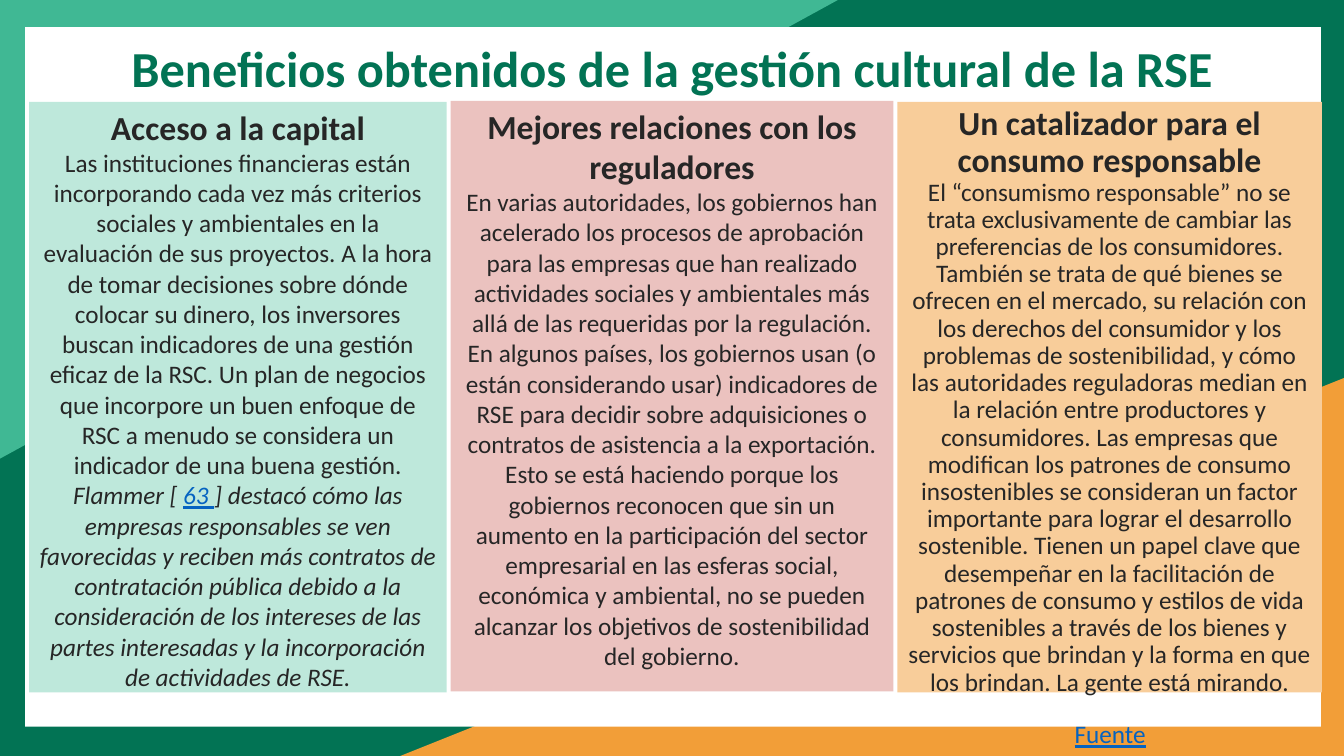
from dataclasses import dataclass

from lxml.etree import SubElement
from pptx import Presentation
from pptx.dml.color import RGBColor
from pptx.enum.shapes import MSO_SHAPE
from pptx.enum.text import MSO_ANCHOR, MSO_AUTO_SIZE, PP_ALIGN
from pptx.oxml.ns import qn
from pptx.util import Inches, Pt

HUES = {
    "green": "027354", "mint": "40B894", "orange": "F29E38", "white": "FFFFFF",
    "aqua": "BEE8DB", "pink": "EBC2BF", "peach": "F8CD9A",
    "ink": "262626", "link": "0563C1",
}


@dataclass
class Box:
    left: float
    top: float
    width: float
    height: float

    def lengths(self) -> tuple:
        return tuple(Inches(n) for n in (self.left, self.top, self.width, self.height))


@dataclass
class Block:
    box: Box
    hue: str
    kind: MSO_SHAPE = MSO_SHAPE.RECTANGLE
    turn: int = 0


@dataclass
class Para:
    text: str
    size: int = 18
    bold: bool = False
    slant: bool = False
    hue: str = "ink"
    mark: str = ""
    align: PP_ALIGN = PP_ALIGN.CENTER


@dataclass
class Panel:
    box: Box
    hue: str
    paras: list
    space: float = 1.0
    body: bool = False


BACK = [
    Block(Box(0, 0, 13.33, 7.5), "green"),
    Block(Box(3.97, 3.75, 9.36, 3.75), "orange", MSO_SHAPE.ISOSCELES_TRIANGLE),
    Block(Box(0, 0, 8.31, 4.55), "mint", MSO_SHAPE.ISOSCELES_TRIANGLE, 180),
    Block(Box(0.25, 0.27, 12.85, 6.94), "white"),
]
TITLE = Para("Beneficios obtenidos de la gestión cultural de la RSE", 36, True, hue="green")
SOURCE = Para("Fuente", hue="link", mark="Fuente", align=PP_ALIGN.LEFT)
PANELS = [
    Panel(Box(4.47, 1, 4.39, 5.86), "pink", [
        Para("Mejores relaciones con los reguladores", 24, True),
        Para("En varias autoridades, los gobiernos han acelerado los procesos de aprobación "
             "para las empresas que han realizado actividades sociales y ambientales más allá "
             "de las requeridas por la regulación. En algunos países, los gobiernos usan (o "
             "están considerando usar) indicadores de RSE para decidir sobre adquisiciones o "
             "contratos de asistencia a la exportación. Esto se está haciendo porque los "
             "gobiernos reconocen que sin un aumento en la participación del sector "
             "empresarial en las esferas social, económica y ambiental, no se pueden alcanzar "
             "los objetivos de sostenibilidad del gobierno."),
    ], body=True),
    Panel(Box(0.29, 1.01, 4.14, 5.86), "aqua", [
        Para("Acceso a la capital", 24, True),
        Para("Las instituciones financieras están incorporando cada vez más criterios "
             "sociales y ambientales en la evaluación de sus proyectos. A la hora de tomar "
             "decisiones sobre dónde colocar su dinero, los inversores buscan indicadores de "
             "una gestión eficaz de la RSC. Un plan de negocios que incorpore un buen enfoque "
             "de RSC a menudo se considera un indicador de una buena gestión."),
        Para("Flammer [ 63 ] destacó cómo las empresas responsables se ven favorecidas y "
             "reciben más contratos de contratación pública debido a la consideración de los "
             "intereses de las partes interesadas y la incorporación de actividades de RSE.",
             slant=True, mark="63 "),
    ]),
    Panel(Box(8.9, 1.01, 4.21, 5.86), "peach", [
        Para("Un catalizador para el consumo responsable", 24, True),
        Para("El “consumismo responsable” no se trata exclusivamente de cambiar las "
             "preferencias de los consumidores. También se trata de qué bienes se ofrecen en "
             "el mercado, su relación con los derechos del consumidor y los problemas de "
             "sostenibilidad, y cómo las autoridades reguladoras median en la relación entre "
             "productores y consumidores. Las empresas que modifican los patrones de consumo "
             "insostenibles se consideran un factor importante para lograr el desarrollo "
             "sostenible. Tienen un papel clave que desempeñar en la facilitación de patrones "
             "de consumo y estilos de vida sostenibles a través de los bienes y servicios que "
             "brindan y la forma en que los brindan. La gente está mirando."),
    ], space=0.9),
]


def tint(name: str) -> RGBColor:
    return RGBColor.from_string(HUES[name])


def paint(shape, hue: str) -> None:
    shape.fill.solid()
    shape.fill.fore_color.rgb = tint(hue)
    shape.line.fill.background()


def draw(shapes, block: Block):
    shape = shapes.add_shape(block.kind, *block.box.lengths())
    shape.shadow.inherit = False
    paint(shape, block.hue)
    shape.rotation = block.turn
    if block.kind == MSO_SHAPE.ISOSCELES_TRIANGLE:
        shape.adjustments[0] = 1
    return shape


def place(shapes, holder, box: Box):
    holder.left, holder.top, holder.width, holder.height = box.lengths()
    shapes.element.append(holder.element)
    return holder


def write(shape, paras: list, space: float = 1.0) -> None:
    frame = shape.text_frame
    frame.word_wrap = True
    frame.auto_size = MSO_AUTO_SIZE.NONE
    frame.vertical_anchor = MSO_ANCHOR.TOP
    for i, para in enumerate(paras):
        line = frame.add_paragraph() if i else frame.paragraphs[0]
        line.alignment = para.align
        line.line_spacing = space
        line.space_before = line.space_after = Pt(0)
        props = line._p.get_or_add_pPr()
        props.set("marL", "0")
        props.set("indent", "0")
        SubElement(props, qn("a:buNone"))
        font = line.font
        font.name, font.size = "Calibri", Pt(para.size)
        font.bold, font.italic = para.bold, para.slant
        font.color.rgb = tint(para.hue)
        parts = para.text.partition(para.mark) if para.mark else (para.text,)
        for part in filter(None, parts):
            run = line.add_run()
            run.text = part
            if part == para.mark:
                run.font.underline = True
                run.font.color.rgb = tint("link")


def main() -> None:
    """Build the slide on the cultural benefits of RSE."""
    deck = Presentation()
    deck.slide_width, deck.slide_height = Inches(13.33), Inches(7.5)
    slide = deck.slides.add_slide(deck.slide_layouts[1])
    shapes = slide.shapes
    for block in BACK:
        draw(shapes, block)
    title = place(shapes, shapes.title, Box(0.93, 0.2, 11.48, 1.23))
    write(title, [TITLE], 1.2)
    for panel in PANELS:
        if panel.body:
            shape = place(shapes, slide.placeholders[1], panel.box)
            paint(shape, panel.hue)
        else:
            shape = draw(shapes, Block(panel.box, panel.hue))
        write(shape, panel.paras, panel.space)
    note = shapes.add_textbox(*Box(10.56, 7.08, 2.31, 0.4).lengths())
    write(note, [SOURCE])
    deck.save("out.pptx")


if __name__ == "__main__":
    main()
